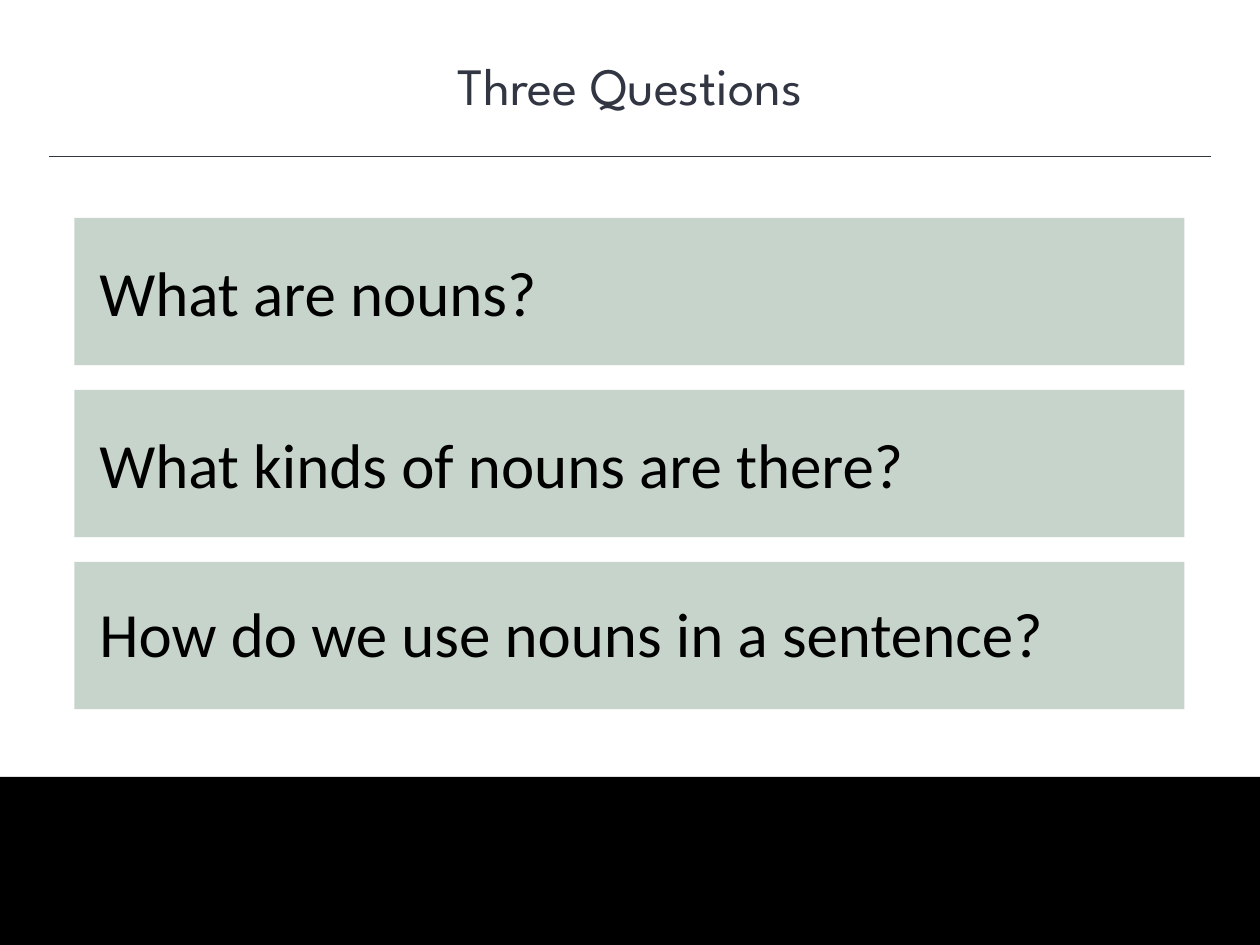
"""Build the Three Questions slide about nouns."""
import lxml.etree
import pptx
import pptx.dml.color
import pptx.enum.shapes
import pptx.enum.text
import pptx.oxml.ns
import pptx.util

Pt = pptx.util.Pt
RGBColor = pptx.dml.color.RGBColor
Align = pptx.enum.text.PP_ALIGN

WHITE = RGBColor(0xFF, 0xFF, 0xFF)
BLACK = RGBColor(0x00, 0x00, 0x00)
NAVY = RGBColor(0x32, 0x35, 0x42)
SAGE = RGBColor(0xC7, 0xD4, 0xCB)

SLIDE_WIDTH, SLIDE_HEIGHT = 720, 540
FOOTER_TOP = 444
PANEL_LEFT, PANEL_TOP = 42.5, 124.5
PANEL_WIDTH, PANEL_HEIGHT = 634.3, 84.2
PANEL_STEP = 98.3
LABEL_LEFT, LABEL_WIDTH, LABEL_HEIGHT = 49.7, 614.9, 51.1
QUESTIONS = [
    ("What are nouns?", 141.1),
    ("What kinds of nouns are there?", 239.8),
    ("How do we use nouns in a sentence?", 336.2),
]


class SlideBuilder:
    title_font = "League Spartan"
    body_font = "Calibri"

    def __init__(self, slide):
        self.slide = slide
        slide.background.fill.solid()
        slide.background.fill.fore_color.rgb = WHITE

    def rectangle(self, left, top, width, height, color):
        shape = self.slide.shapes.add_shape(
            pptx.enum.shapes.MSO_SHAPE.RECTANGLE,
            Pt(left), Pt(top), Pt(width), Pt(height))
        shape.shadow.inherit = False
        shape.fill.solid()
        shape.fill.fore_color.rgb = color
        shape.line.fill.background()

    def text(self, left, top, width, height, text, font, size, color,
             alignment=Align.LEFT, fill=None):
        shape = self.slide.shapes.add_textbox(Pt(left), Pt(top), Pt(width), Pt(height))
        if fill is not None:
            shape.fill.solid()
            shape.fill.fore_color.rgb = fill
        shape.text_frame.word_wrap = True
        paragraph = shape.text_frame.paragraphs[0]
        paragraph.text = text
        paragraph.alignment = alignment
        paragraph.font.name = font
        paragraph.font.size = Pt(size)
        paragraph.font.color.rgb = color

    def rule(self, left, right, top, color):
        connector = self.slide.shapes.add_connector(
            pptx.enum.shapes.MSO_CONNECTOR.STRAIGHT,
            Pt(left), Pt(top), Pt(right), Pt(top))
        connector.line.color.rgb = color
        connector.line.width = Pt(1)
        lxml.etree.SubElement(connector._element.spPr, pptx.oxml.ns.qn("a:effectLst"))

    def question(self, index, text, label_top):
        self.rectangle(PANEL_LEFT, PANEL_TOP + index * PANEL_STEP,
                       PANEL_WIDTH, PANEL_HEIGHT, SAGE)
        self.text(LABEL_LEFT, label_top, LABEL_WIDTH, LABEL_HEIGHT, text,
                  self.body_font, 36, BLACK, fill=SAGE)


def main():
    presentation = pptx.Presentation()
    presentation.slide_width = Pt(SLIDE_WIDTH)
    presentation.slide_height = Pt(SLIDE_HEIGHT)
    builder = SlideBuilder(presentation.slides.add_slide(presentation.slide_layouts[6]))
    builder.text(0, 26.6, SLIDE_WIDTH, 43.9, "Three Questions",
                 builder.title_font, 30, NAVY, Align.CENTER)
    builder.rectangle(0, FOOTER_TOP, SLIDE_WIDTH, SLIDE_HEIGHT - FOOTER_TOP, BLACK)
    builder.rule(28, SLIDE_WIDTH - 28, 89.5, NAVY)
    for index, (text, label_top) in reversed(list(enumerate(QUESTIONS))):
        builder.question(index, text, label_top)
    presentation.save("out.pptx")


if __name__ == "__main__":
    main()
